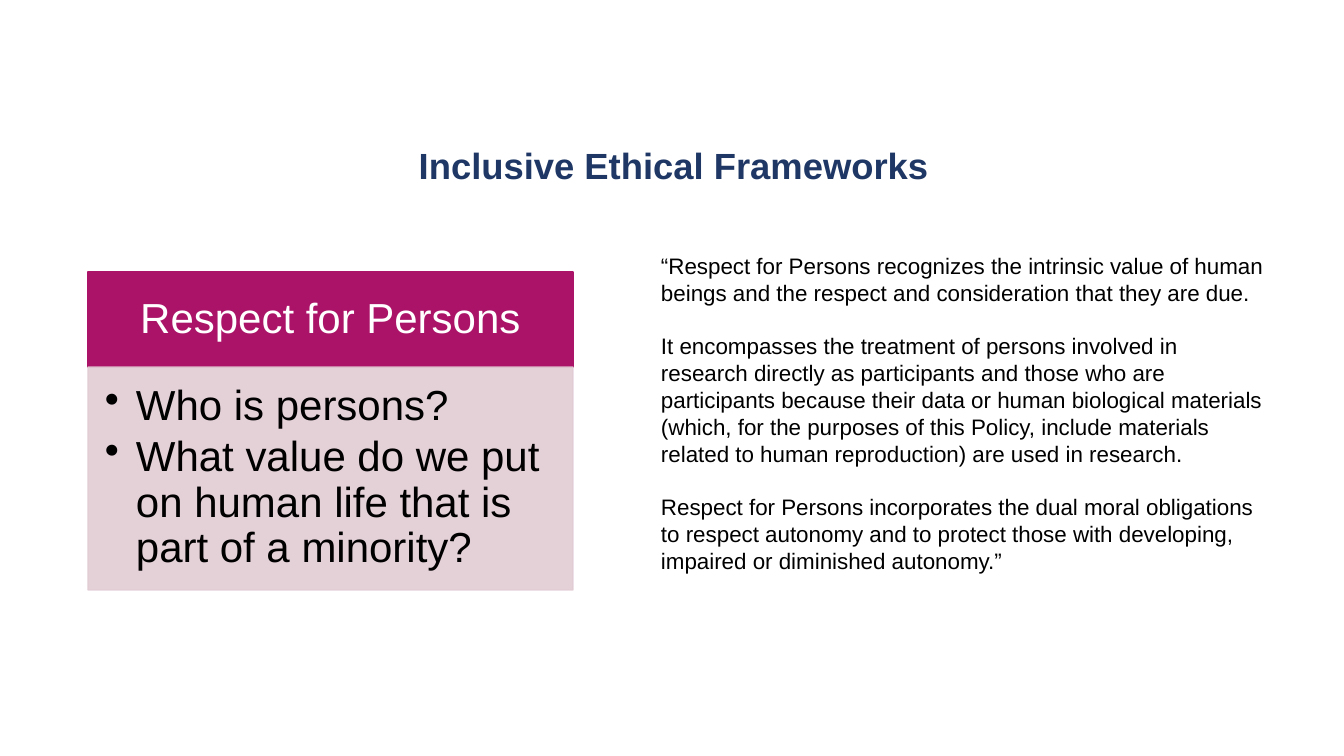
from dataclasses import dataclass

from lxml import etree
from pptx import Presentation
from pptx import util as u
from pptx.dml import color
from pptx.enum import shapes, text
from pptx.oxml import ns

SLIDE_W, SLIDE_H = 1344, 756


def px(n):
    return u.Emu(round(n * 12192000 / SLIDE_W))


@dataclass(frozen=True)
class Theme:
    font: str = "Arial"
    navy: str = "1E3765"
    magenta: str = "AB1368"
    blush: str = "E2CCD4"
    white: str = "FFFFFF"
    black: str = "000000"
    title_size: int = 26
    card_size: int = 30
    quote_size: int = 16


class Deck:
    def __init__(self, theme):
        self.theme = theme
        self.prs = Presentation()
        self.prs.slide_width, self.prs.slide_height = px(SLIDE_W), px(SLIDE_H)
        self.s = self.prs.slides.add_slide(self.prs.slide_layouts[5])

    def frame(self, sp, insets, anchor):
        tf = sp.text_frame
        tf.word_wrap = True
        tf.auto_size = text.MSO_AUTO_SIZE.NONE
        tf.vertical_anchor = anchor
        tf.margin_left, tf.margin_top, tf.margin_right, tf.margin_bottom = map(px, insets)
        return tf

    def paragraphs(self, tf, lines, size, rgb, align=text.PP_ALIGN.LEFT,
                   spacing=1.0, gap=0, bold=False, indent=0):
        for i, line in enumerate(lines):
            p = tf.add_paragraph() if i else tf.paragraphs[0]
            p.alignment = align
            p.line_spacing = spacing
            p.space_before = u.Pt(gap if i else 0)
            if indent:
                pPr = p._p.get_or_add_pPr()
                pPr.set("marL", str(px(indent)))
                pPr.set("indent", str(-px(indent)))
                etree.SubElement(pPr, ns.qn("a:buChar")).set("char", "•")
            r = p.add_run()
            r.text = line
            r.font.name = self.theme.font
            r.font.size = u.Pt(size)
            r.font.bold = bold
            r.font.color.rgb = color.RGBColor.from_string(rgb)

    def title(self, box, line):
        sp = self.s.shapes.title
        sp.left, sp.top, sp.width, sp.height = map(px, box)
        tf = self.frame(sp, (10, 5, 10, 5), text.MSO_ANCHOR.MIDDLE)
        self.paragraphs(tf, [line], self.theme.title_size, self.theme.navy,
                        text.PP_ALIGN.CENTER, 0.9, bold=True)

    def panel(self, box, rgb, insets, anchor, opacity=100):
        sp = self.s.shapes.add_shape(shapes.MSO_SHAPE.RECTANGLE, *map(px, box))
        sp.shadow.inherit = False
        sp.line.width = u.Pt(1)
        for fill in (sp.fill, sp.line.fill):
            fill.solid()
            fill.fore_color.rgb = color.RGBColor.from_string(rgb)
        if opacity < 100:
            for clr in sp._element.spPr.iter(ns.qn("a:srgbClr")):
                etree.SubElement(clr, ns.qn("a:alpha")).set("val", str(opacity * 1000))
        return self.frame(sp, insets, anchor)

    def card(self, left, top, width, head_h, body_h, heading, bullets):
        t = self.theme
        head = self.panel((left, top, width, head_h), t.magenta,
                          (23, 13, 23, 13), text.MSO_ANCHOR.MIDDLE)
        self.paragraphs(head, [heading], t.card_size, t.white, text.PP_ALIGN.CENTER, 0.9)
        body = self.panel((left, top + head_h, width, body_h), t.blush,
                          (17, 17, 23, 26), text.MSO_ANCHOR.TOP, opacity=90)
        self.paragraphs(body, bullets, t.card_size, t.black, spacing=0.9, gap=4.5, indent=31)

    def quote(self, box, lines):
        sp = self.s.shapes.add_textbox(*map(px, box))
        tf = self.frame(sp, (10, 5, 10, 5), text.MSO_ANCHOR.TOP)
        tf.auto_size = text.MSO_AUTO_SIZE.SHAPE_TO_FIT_TEXT
        self.paragraphs(tf, lines, self.theme.quote_size, self.theme.black, gap=19)


def main():
    deck = Deck(Theme())
    deck.title((151, 118, 1046, 99), "Inclusive Ethical Frameworks")
    deck.card(88, 272, 485, 95, 223, "Respect for Persons", [
        "Who is persons?",
        "What value do we put on human life that is part of a minority?",
    ])
    deck.quote((651, 247, 623, 363), [
        "“Respect for Persons recognizes the intrinsic value of human beings "
        "and the respect and consideration that they are due.",
        "It encompasses the treatment of persons involved in research directly as "
        "participants and those who are participants because their data or human "
        "biological materials (which, for the purposes of this Policy, include "
        "materials related to human reproduction) are used in research.",
        "Respect for Persons incorporates the dual moral obligations to respect "
        "autonomy and to protect those with developing, impaired or diminished "
        "autonomy.”",
    ])
    deck.prs.save("out.pptx")


if __name__ == "__main__":
    main()
